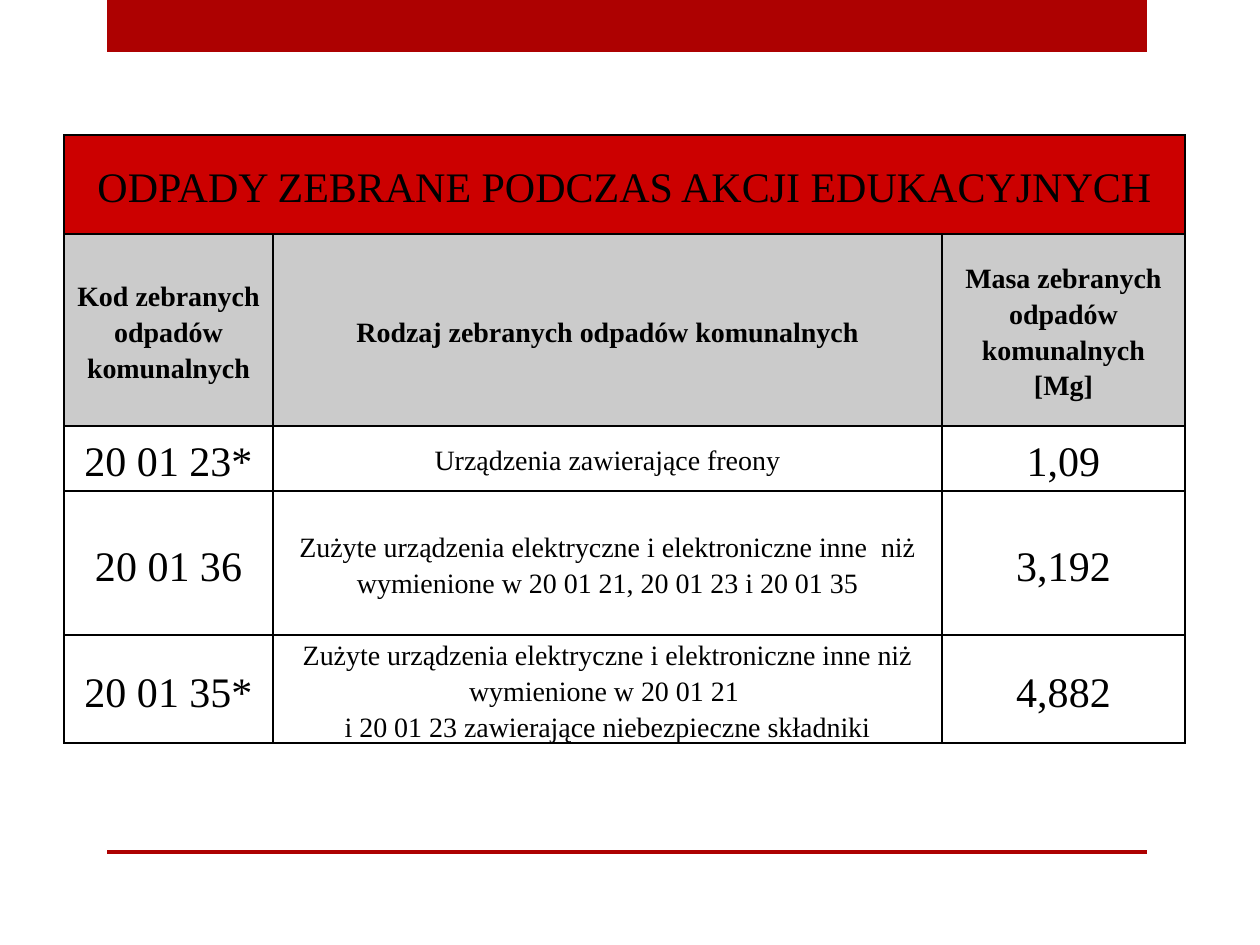
"""Build the slide with the table of waste collected during educational campaigns."""
from copy import deepcopy

from lxml.etree import SubElement
from pptx import Presentation
from pptx.dml.color import RGBColor
from pptx.enum.shapes import MSO_SHAPE
from pptx.enum.text import MSO_ANCHOR, PP_ALIGN
from pptx.oxml.ns import qn
from pptx.util import Emu, Pt

COLORS = {"accent": "AD0101", "heading": "CC0000", "header": "CBCBCB", "ink": "000000"}
FONT = "Times New Roman"
EMU_PER_PX = 914400 / 126

HEADING = "ODPADY ZEBRANE PODCZAS AKCJI EDUKACYJNYCH"
HEADERS = [
    "Kod zebranych odpadów komunalnych",
    "Rodzaj zebranych odpadów komunalnych",
    "Masa zebranych odpadów komunalnych\n[Mg]",
]
WASTE = [
    ("20 01 23*", "Urządzenia zawierające freony", "1,09"),
    ("20 01 36", "Zużyte urządzenia elektryczne i elektroniczne inne  niż "
     "wymienione w 20 01 21, 20 01 23 i 20 01 35", "3,192"),
    ("20 01 35*", "Zużyte urządzenia elektryczne i elektroniczne inne niż "
     "wymienione w 20 01 21 \ni 20 01 23 zawierające niebezpieczne składniki", "4,882"),
]
COLUMN_WIDTHS = [209, 669, 243]
ROW_HEIGHTS = [99, 192, 65, 144, 108]


def px(length):
    return Emu(round(length * EMU_PER_PX))


def color(name):
    return RGBColor.from_string(COLORS[name])


def write(frame, text, size=24, bold=False, after=0, ink="ink"):
    para = frame.paragraphs[0]
    para.text = text
    para.alignment = PP_ALIGN.CENTER
    para.line_spacing = 1.15
    para.space_after = Pt(after)
    for span in para.runs:
        span.font.name = FONT
        span.font.size = Pt(size)
        span.font.bold = bold
        span.font.color.rgb = color(ink)
    for line_break in para._p.findall(qn("a:br")):
        line_break.append(deepcopy(para.runs[0].font._element))


class SlideBuilder:
    def __init__(self, deck):
        self.page = deck.slides.add_slide(deck.slide_layouts[6])

    def bar(self, left, top, width, height):
        box = self.page.shapes.add_shape(
            MSO_SHAPE.RECTANGLE, px(left), px(top), px(width), px(height))
        box.shadow.inherit = False
        box.fill.solid()
        box.fill.fore_color.rgb = color("accent")
        box.line.fill.background()

    def table(self, left, top, widths, heights):
        table = self.page.shapes.add_table(
            len(heights), len(widths), px(left), px(top),
            px(sum(widths)), px(sum(heights))).table
        table.first_row = table.horz_banding = False
        for column, width in zip(table.columns, widths):
            column.width = px(width)
        for row, height in zip(table.rows, heights):
            row.height = px(height)
        for cell in table.iter_cells():
            self.frame_cell(cell)
        return table

    def frame_cell(self, cell):
        cell.vertical_anchor = MSO_ANCHOR.MIDDLE
        cell.margin_left = cell.margin_right = px(6)
        cell.margin_top, cell.margin_bottom = px(1), 0
        properties = cell._tc.get_or_add_tcPr()
        for side in ("lnL", "lnR", "lnT", "lnB"):
            border = SubElement(properties, qn(f"a:{side}"), w=str(Pt(1)))
            fill = SubElement(border, qn("a:solidFill"))
            SubElement(fill, qn("a:srgbClr"), val=COLORS["ink"])
        cell.fill.background()

    def cell(self, cell, text, fill=None, **style):
        if fill:
            cell.fill.solid()
            cell.fill.fore_color.rgb = color(fill)
        write(cell.text_frame, text, **style)


def main():
    deck = Presentation()
    deck.slide_width, deck.slide_height = px(1260), px(945)
    builder = SlideBuilder(deck)
    builder.bar(107, 0, 1040, 52)
    builder.bar(107, 850, 1040, 4)

    table = builder.table(64, 135, COLUMN_WIDTHS, ROW_HEIGHTS)
    table.cell(0, 0).merge(table.cell(0, 2))
    builder.cell(table.cell(0, 0), HEADING, fill="heading")
    for column, text in enumerate(HEADERS):
        builder.cell(table.cell(1, column), text, fill="header", size=16, bold=True)
    for row, record in enumerate(WASTE, start=2):
        for column, text in enumerate(record):
            size = 16 if column == 1 else 24
            builder.cell(table.cell(row, column), text, size=size, after=10)
    deck.save("out.pptx")


if __name__ == "__main__":
    main()
